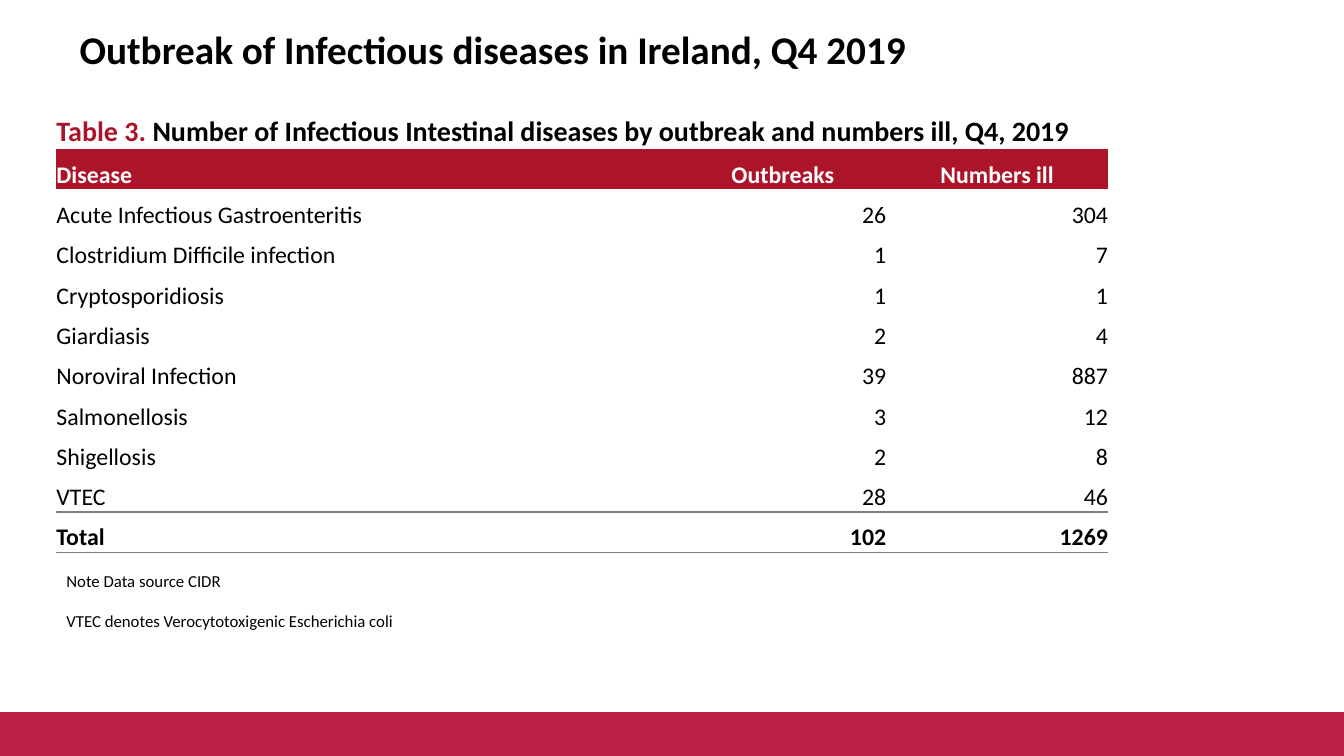
from lxml import etree
from pptx import Presentation
from pptx import util as u
from pptx.dml.color import RGBColor
from pptx.enum import shapes, text
from pptx.oxml import ns

WIDTH, HEIGHT = u.Inches(13.33), u.Inches(7.5)
FONT = "Calibri"
BLACK = RGBColor(0x00, 0x00, 0x00)
WHITE = RGBColor(0xFF, 0xFF, 0xFF)
HEADER_RED = RGBColor(0xAC, 0x14, 0x2A)
BAR_RED = RGBColor(0xBA, 0x1F, 0x46)
RULE_GREY = RGBColor(0x80, 0x80, 0x80)
NO_STYLE = "{2D5ABB26-0587-4C30-8999-92F81FD0307C}"

LEFT = u.Inches(0.56)
COLUMNS = (6.18, 2.05, 2.2, 0.84)
CAPTION_ROW, ROW = 1.21, 0.4
HEADERS = ("Disease", "Outbreaks", "Numbers ill")
DISEASES = (
    ("Acute Infectious Gastroenteritis", 26, 304),
    ("Clostridium Difficile infection", 1, 7),
    ("Cryptosporidiosis", 1, 1),
    ("Giardiasis", 2, 4),
    ("Noroviral Infection", 39, 887),
    ("Salmonellosis", 3, 12),
    ("Shigellosis", 2, 8),
    ("VTEC", 28, 46),
    ("Total", 102, 1269),
)
NOTES = ("Note Data source CIDR", "VTEC denotes Verocytotoxigenic Escherichia coli")


def set_font(font, size, color=BLACK, bold=False):
    """Set the typeface, size, colour and weight of a font."""
    font.name, font.size, font.bold = FONT, u.Pt(size), bold
    font.color.rgb = color


def add_bar(s):
    """Draw the band along the foot of the slide."""
    height = u.Inches(0.42)
    sp = s.shapes.add_shape(shapes.MSO_SHAPE.RECTANGLE, 0, HEIGHT - height, WIDTH, height)
    sp.shadow.inherit = False
    sp.fill.solid()
    sp.fill.fore_color.rgb = BAR_RED
    sp.line.color.rgb = BAR_RED
    sp.line.width = u.Pt(2)


def fill_title(s, title):
    """Place and format the title placeholder."""
    sp = s.shapes.title
    sp.left, sp.top, sp.width, sp.height = map(u.Inches, (0.67, 0.17, 10.33, 0.62))
    tf = sp.text_frame
    tf.text = title
    tf.vertical_anchor = text.MSO_ANCHOR.MIDDLE
    tf.margin_left = tf.margin_right = u.Inches(0.12)
    tf.margin_top = tf.margin_bottom = u.Inches(0.06)
    p = tf.paragraphs[0]
    p.alignment = text.PP_ALIGN.LEFT
    set_font(p.font, 28, bold=True)


def add_rules(cell, edges):
    """Draw grey rules on the named edges of a cell, given in schema order."""
    tc_pr = cell._tc.get_or_add_tcPr()
    for position, edge in enumerate(edges):
        line = etree.Element(ns.qn(f"a:ln{edge}"), w=str(u.Pt(1)))
        fill = etree.SubElement(line, ns.qn("a:solidFill"))
        etree.SubElement(fill, ns.qn("a:srgbClr"), val=str(RULE_GREY))
        tc_pr.insert(position, line)


def write_cell(cell, value, align, color=BLACK, bold=False):
    """Write one value into a cell of the table."""
    cell.text = str(value)
    p = cell.text_frame.paragraphs[0]
    p.alignment = align
    set_font(p.font, 17, color, bold)


def write_caption(cell):
    """Write the caption with its red table number."""
    p = cell.text_frame.paragraphs[0]
    for words, color in (
        ("Table 3. ", HEADER_RED),
        ("Number of Infectious Intestinal diseases by outbreak and numbers ill, Q4, 2019", BLACK),
    ):
        r = p.add_run()
        r.text = words
        set_font(r.font, 20, color, True)


def add_plain_table(s, heights):
    """Add an unstyled table with bottom-anchored cells without margins."""
    frame = s.shapes.add_table(
        len(heights), len(COLUMNS), LEFT, u.Inches(0.27),
        u.Inches(sum(COLUMNS)), u.Inches(sum(heights)),
    )
    table = frame.table
    table.first_row = table.horz_banding = False
    table._tbl.tblPr.find(ns.qn("a:tableStyleId")).text = NO_STYLE
    for column, width in zip(table.columns, COLUMNS):
        column.width = u.Inches(width)
    for row, height in zip(table.rows, heights):
        row.height = u.Inches(height)
    for cell in table.iter_cells():
        cell.fill.background()
        cell.vertical_anchor = text.MSO_ANCHOR.BOTTOM
        cell.margin_left = cell.margin_right = cell.margin_top = cell.margin_bottom = 0
    return table


def add_disease_table(s):
    """Add the outbreak table with its caption, header and total."""
    left, center, right = text.PP_ALIGN.LEFT, text.PP_ALIGN.CENTER, text.PP_ALIGN.RIGHT
    table = add_plain_table(s, [CAPTION_ROW] + [ROW] * (len(DISEASES) + 1))
    table.cell(0, 0).merge(table.cell(0, len(COLUMNS) - 1))
    write_caption(table.cell(0, 0))
    for col, header in enumerate(HEADERS):
        cell = table.cell(1, col)
        write_cell(cell, header, center if col else left, WHITE, True)
        cell.fill.solid()
        cell.fill.fore_color.rgb = HEADER_RED
    total = len(DISEASES) - 1
    edges = {total - 1: "B", total: "TB"}
    for index, record in enumerate(DISEASES):
        for col, value in enumerate(record):
            cell = table.cell(index + 2, col)
            write_cell(cell, value, right if col else left, bold=index == total)
            add_rules(cell, edges.get(index, ""))


def add_notes(s):
    """Add the notes below the table."""
    box = s.shapes.add_textbox(LEFT, u.Inches(5.61), u.Inches(4.83), u.Inches(0.71))
    tf = box.text_frame
    tf.word_wrap = True
    for index, note in enumerate(NOTES):
        p = tf.add_paragraph() if index else tf.paragraphs[0]
        p.text = note
        if index:
            p.space_before = u.Pt(14.4)
        set_font(p.font, 12)


def main():
    """Build and save the slide."""
    prs = Presentation()
    prs.slide_width, prs.slide_height = WIDTH, HEIGHT
    s = prs.slides.add_slide(prs.slide_layouts[5])
    add_bar(s)
    add_notes(s)
    add_disease_table(s)
    fill_title(s, "Outbreak of Infectious diseases in Ireland, Q4 2019")
    prs.save("out.pptx")


if __name__ == "__main__":
    main()
